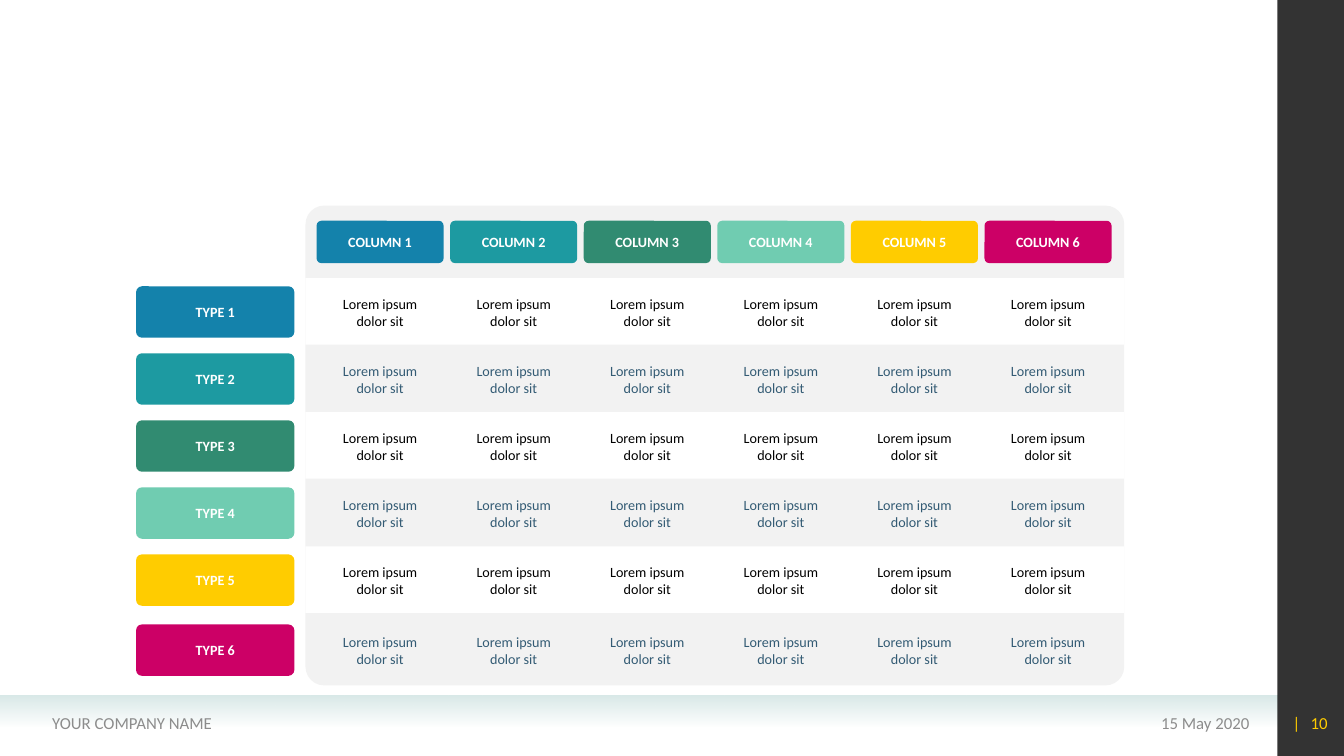
from lxml.etree import SubElement
from pptx import Presentation
from pptx.dml.color import RGBColor
from pptx.enum.shapes import MSO_SHAPE as Shape
from pptx.enum.text import MSO_ANCHOR as Anchor, MSO_AUTO_SIZE as AutoSize, PP_ALIGN as Align
from pptx.oxml.ns import qn
from pptx.util import Inches, Pt

COLORS = {
    "footer": "D9E9E8", "footer_text": "8C8C8C", "sidebar": "000000",
    "panel": "F2F2F2", "white": "FFFFFF", "black": "000000", "slate": "335B74",
    "blue": "1482AB", "teal": "1D9AA1", "green": "318B71",
    "mint": "70CCB1", "yellow": "FFCC00", "pink": "CC0066",
}
SERIES = ["blue", "teal", "green", "mint", "yellow", "pink"]

COLUMN_LEFT, COLUMN_PITCH = 3.14, 1.325
COLUMN_WIDTH, COLUMN_HEIGHT = 1.26, 0.42
ROW_TOP, ROW_PITCH, LAST_ROW_SHIFT = 2.84, 0.665, 0.03
ROW_WIDTH, ROW_HEIGHT = 1.57, 0.51
PANEL_LEFT, PANEL_WIDTH = 3.03, 8.12
CELL_WIDTH, CELL_HEIGHT = 1.11, 0.38


def rgb(name):
    return RGBColor.from_string(COLORS[name])


def write_text(frame, text, size=10.1, color="black", bold=False, align=Align.LEFT, font="Calibri"):
    paragraph = frame.paragraphs[0]
    paragraph.alignment = align
    run = paragraph.add_run()
    run.text = text
    run.font.name, run.font.size, run.font.bold = font, Pt(size), bold
    run.font.color.rgb = rgb(color)


def set_opacity(shape, percents):
    """Give each colour of the shape's fill its opacity, in order."""
    fill_colors = list(shape._element.spPr.iter(qn("a:srgbClr")))
    for color, percent in zip(fill_colors, percents):
        SubElement(color, qn("a:alpha")).set("val", str(percent * 1000))


class SlideBuilder:
    def __init__(self, presentation):
        self.slide = presentation.slides.add_slide(presentation.slide_layouts[6])

    def block(self, left, top, width, height, color, corner=None):
        kind = Shape.RECTANGLE if corner is None else Shape.ROUNDED_RECTANGLE
        shape = self.slide.shapes.add_shape(
            kind, Inches(left), Inches(top), Inches(width), Inches(height))
        if corner is not None:
            shape.adjustments[0] = corner
        shape.shadow.inherit = False
        shape.fill.solid()
        shape.fill.fore_color.rgb = rgb(color)
        shape.line.fill.background()
        return shape

    def text(self, left, top, width, height, text, wrap=True, grow=False, insets=(0.1, 0.05), **style):
        box = self.slide.shapes.add_textbox(
            Inches(left), Inches(top), Inches(width), Inches(height))
        frame = box.text_frame
        frame.word_wrap = wrap
        frame.auto_size = AutoSize.SHAPE_TO_FIT_TEXT if grow else AutoSize.NONE
        frame.vertical_anchor = Anchor.MIDDLE
        frame.margin_left = frame.margin_right = Inches(insets[0])
        frame.margin_top = frame.margin_bottom = Inches(insets[1])
        write_text(frame, text, **style)
        return box

    def label(self, left, top, width, height, text, color, text_width):
        """A rounded tile with a caption at its centre."""
        self.block(left, top, width, height, color, corner=0.114)
        self.text(left + (width - text_width) / 2, top + (height - 0.27) / 2, text_width, 0.27,
                  text, wrap=False, grow=True, color="white", bold=True, align=Align.CENTER)

    def footer(self):
        band = self.block(0, 6.9, 12.67, 0.31, "footer")
        band.fill.gradient()
        band.fill.gradient_angle = 270
        for stop in band.fill.gradient_stops:
            stop.color.rgb = rgb("footer")
        set_opacity(band, [100, 0])

        sidebar = self.block(12.67, 0, 0.67, 7.5, "sidebar")
        set_opacity(sidebar, [80])

        self.text(9.1, 6.97, 3.39, 0.4, "15 May 2020", size=12,
                  color="footer_text", align=Align.RIGHT)
        self.text(0.42, 6.97, 4.9, 0.4, "YOUR COMPANY NAME", size=12, color="footer_text")

        # The tab stop sets the gap between the bar and the page number
        number = self.text(12.6, 6.97, 0.67, 0.4, "|\t10", size=12, color="yellow")
        number.text_frame.margin_left = Inches(0.22)
        number.text_frame.margin_right = 0
        properties = number.text_frame.paragraphs[0]._p.get_or_add_pPr()
        tab = SubElement(SubElement(properties, qn("a:tabLst")), qn("a:tab"))
        tab.set("pos", str(Inches(0.18)))
        tab.set("algn", "l")


def main():
    presentation = Presentation()
    presentation.slide_width, presentation.slide_height = Inches(13.33), Inches(7.5)
    builder = SlideBuilder(presentation)
    builder.footer()

    # Panel with white stripes behind every other row
    builder.block(PANEL_LEFT, 2.04, PANEL_WIDTH, 4.76, "panel", corner=0.039)
    for stripe in range(3):
        builder.block(PANEL_LEFT, 2.76 + 2 * stripe * ROW_PITCH, PANEL_WIDTH, 0.66, "white")

    # Column headings
    column_lefts = [COLUMN_LEFT + index * COLUMN_PITCH for index in range(len(SERIES))]
    for number, (left, color) in enumerate(zip(column_lefts, SERIES), 1):
        builder.label(left, 2.19, COLUMN_WIDTH, COLUMN_HEIGHT, f"COLUMN {number}", color, 0.86)

    # Rows: type label, then one cell per column
    for index, color in enumerate(SERIES):
        top = ROW_TOP + index * ROW_PITCH
        if color == SERIES[-1]:
            top += LAST_ROW_SHIFT
        builder.label(1.35, top, ROW_WIDTH, ROW_HEIGHT, f"TYPE {index + 1}", color, 0.61)
        for left in column_lefts:
            builder.text(left + (COLUMN_WIDTH - CELL_WIDTH) / 2, top + (ROW_HEIGHT - CELL_HEIGHT) / 2,
                         CELL_WIDTH, CELL_HEIGHT, "Lorem ipsum dolor sit", grow=True,
                         insets=(0.04, 0.02), align=Align.CENTER,
                         color="slate" if index % 2 else "black")

    presentation.save("out.pptx")


if __name__ == "__main__":
    main()
